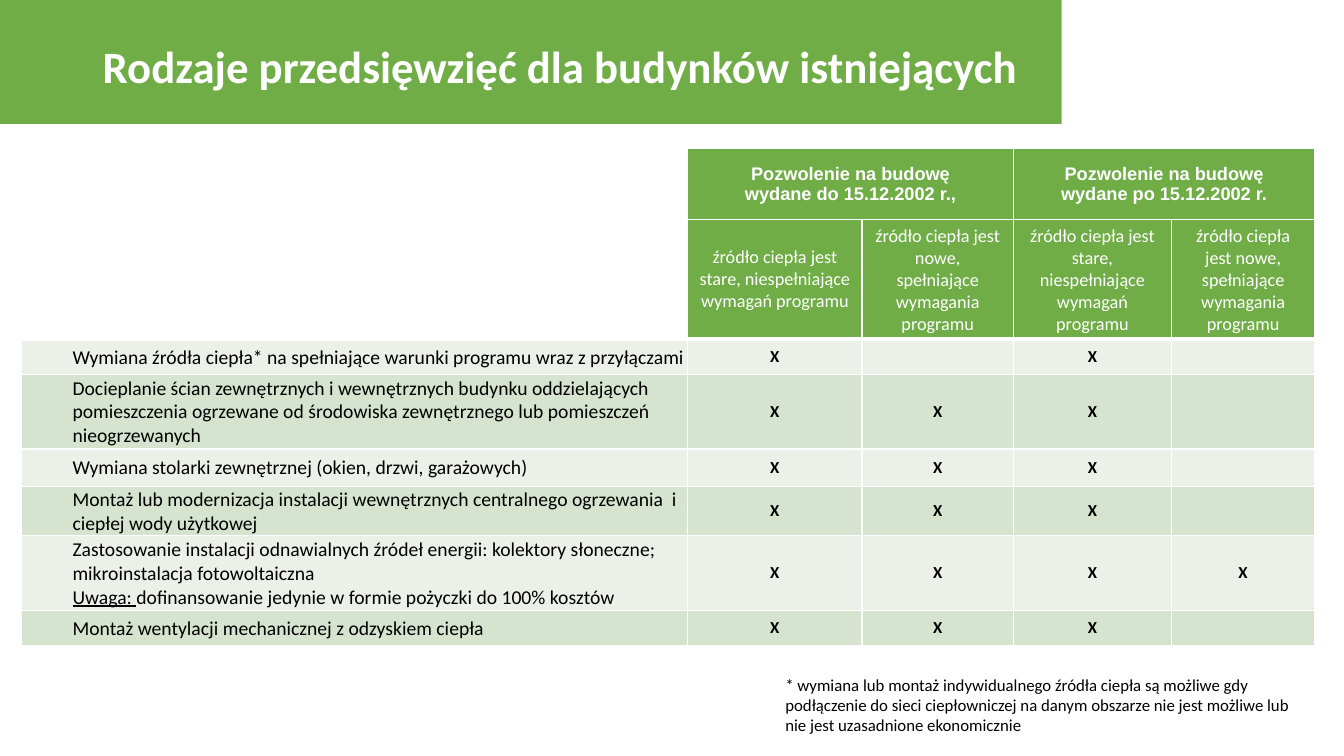
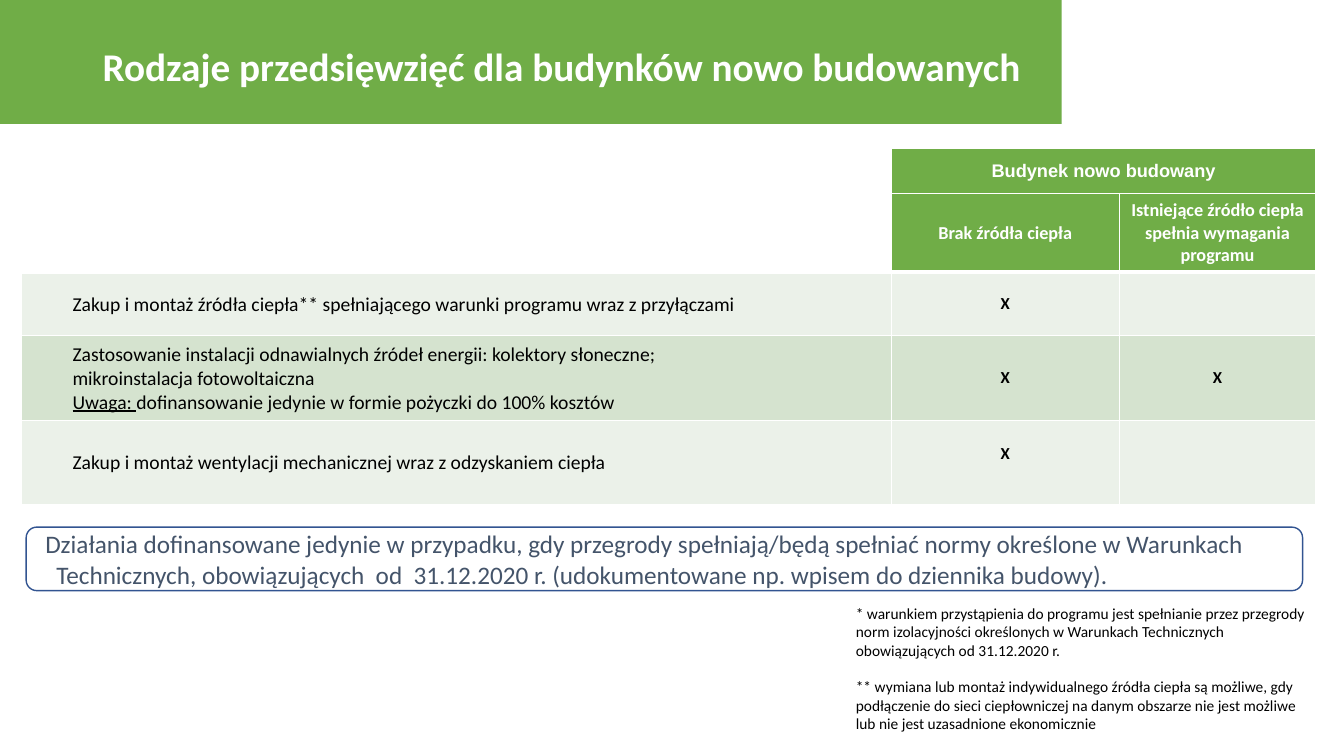
from lxml import etree
from pptx import Presentation
from pptx.dml.color import RGBColor
from pptx.enum.shapes import MSO_SHAPE
from pptx.enum.text import MSO_ANCHOR, PP_ALIGN
from pptx.oxml.ns import qn
from pptx.util import Inches, Pt

GREEN, WHITE, BLACK = "70AD47", "FFFFFF", "000000"
BANDS = ("EBF1E9", "D5E3CF")
CALLOUT_LINE, CALLOUT_TEXT = "325491", "44546A"

RENEWABLES = "Zastosowanie instalacji odnawialnych źródeł energii: kolektory słoneczne;"
PHOTOVOLTAIC = "mikroinstalacja fotowoltaiczna"
LOAN_NOTE = [("Uwaga: ", {"underline": True}),
             ("dofinansowanie jedynie w formie pożyczki do 100% kosztów", {})]
OLD_SOURCE = ["źródło ciepła jest stare, niespełniające wymagań programu"]
NEW_SOURCE = ["źródło ciepła jest nowe, spełniające wymagania programu"]


def rgb(value):
    return RGBColor.from_string(value)


def set_borders(cell, top, bottom):
    """Draw white cell borders; top and bottom widths are in points."""
    tc_pr = cell._tc.get_or_add_tcPr()
    for tag, width in (("lnL", 1), ("lnR", 1), ("lnT", top), ("lnB", bottom)):
        ln = etree.SubElement(tc_pr, qn(f"a:{tag}"), w=str(Pt(width)))
        fill = etree.SubElement(ln, qn("a:solidFill"))
        etree.SubElement(fill, qn("a:srgbClr"), val=WHITE)


class Deck:
    def __init__(self):
        self.prs = Presentation()
        self.prs.slide_width, self.prs.slide_height = Inches(13.33), Inches(7.5)
        self.s = None

    def fill_frame(self, tf, paragraphs, size, color=BLACK, align=PP_ALIGN.LEFT,
                   para=None, **font):
        """Fill a frame; a paragraph is a string or a list of (text, format)."""
        for i, runs in enumerate(paragraphs):
            p = tf.add_paragraph() if i else tf.paragraphs[0]
            p.alignment = align
            for name, value in (para or {}).items():
                if i or name != "space_before":
                    setattr(p, name, value)
            for text, extra in [(runs, {})] if isinstance(runs, str) else runs:
                r = p.add_run()
                r.text = text
                r.font.color.rgb = rgb(color)
                style = {"name": "Calibri", "size": Pt(size), "bold": False}
                for name, value in (style | font | extra).items():
                    setattr(r.font, name, value)

    def shape(self, kind, box, fill, line=None):
        sp = self.s.shapes.add_shape(kind, *map(Inches, box))
        sp.shadow.inherit = False
        sp.fill.solid()
        sp.fill.fore_color.rgb = rgb(fill)
        if line:
            sp.line.color.rgb = rgb(line)
            sp.line.width = Pt(1)
        else:
            sp.line.fill.background()
        return sp

    def text(self, box, paragraphs, size, anchor=MSO_ANCHOR.TOP, **style):
        tf = self.s.shapes.add_textbox(*map(Inches, box)).text_frame
        tf.word_wrap = True
        tf.vertical_anchor = anchor
        self.fill_frame(tf, paragraphs, size, **style)

    def slide(self, title, size):
        """Start a slide with the green band and its title."""
        self.s = self.prs.slides.add_slide(self.prs.slide_layouts[6])
        self.shape(MSO_SHAPE.RECTANGLE, (0, 0, 10.53, 1.23), GREEN)
        self.text((0.92, 0.21, 9.61, 0.94), [title], size, MSO_ANCHOR.MIDDLE,
                  color=WHITE, bold=True, para={"line_spacing": 0.9})

    def cell(self, cell, paragraphs, size, fill=None, top=1, bottom=1, **style):
        set_borders(cell, top, bottom)
        cell.vertical_anchor = MSO_ANCHOR.MIDDLE
        if fill:
            cell.fill.solid()
            cell.fill.fore_color.rgb = rgb(fill)
        else:
            cell.fill.background()
        if paragraphs:
            self.fill_frame(cell.text_frame, paragraphs, size, **style)
        else:
            p = cell.text_frame.paragraphs[0]._p
            etree.SubElement(p, qn("a:endParaRPr"), sz=str(size * 100))

    def table(self, widths, heights, groups, subheads, rows, bold_subheads=False):
        """Place a table; each group heads two columns, each row is (label, marks)."""
        frame = self.s.shapes.add_table(
            len(heights), len(widths), Inches(0.21), Inches(1.47),
            Inches(sum(widths)), Inches(sum(heights)))
        t = frame.table
        t.first_row = t.horz_banding = False
        for col, width in zip(t.columns, widths):
            col.width = Inches(width)
        for row, height in zip(t.rows, heights):
            row.height = Inches(height)

        t.cell(0, 0).merge(t.cell(1, 0))
        for r in (0, 1):
            self.cell(t.cell(r, 0), None, 13, bottom=3)
        head = {"fill": GREEN, "color": WHITE, "align": PP_ALIGN.CENTER}
        for i, group in enumerate(groups):
            left, right = t.cell(0, 2 * i + 1), t.cell(0, 2 * i + 2)
            left.merge(right)
            self.cell(left, group, 13, bold=True, name="Arial", **head)
            self.cell(right, None, 13, GREEN)
        for c, subhead in enumerate(subheads, 1):
            self.cell(t.cell(1, c), subhead, 13, bottom=3, bold=bold_subheads, **head)

        for r, (label, marks) in enumerate(rows, 2):
            fill = BANDS[r % 2]
            first = t.cell(r, 0)
            first.margin_left = Inches(0.51)
            first.margin_right = first.margin_top = Inches(0.01)
            first.margin_bottom = 0
            self.cell(first, label, 14, fill)
            for c, mark in enumerate(marks, 1):
                self.cell(t.cell(r, c), ["X"] if mark == "X" else None, 12, fill,
                          top=3 if r == 2 else 1, bold=True, align=PP_ALIGN.CENTER)
        return t

    def callout(self, box, text):
        sp = self.shape(MSO_SHAPE.ROUNDED_RECTANGLE, box, WHITE, CALLOUT_LINE)
        tf = sp.text_frame
        tf.word_wrap = True
        tf.vertical_anchor = MSO_ANCHOR.MIDDLE
        self.fill_frame(tf, [text], 18, CALLOUT_TEXT)
        p_pr = tf.paragraphs[0]._p.get_or_add_pPr()
        p_pr.set("marL", str(Inches(0.17)))
        p_pr.set("indent", str(Inches(-0.11)))


def existing_buildings(deck):
    deck.slide("Rodzaje przedsięwzięć dla budynków istniejących", 32)
    deck.table(
        widths=(6.61, 1.73, 1.5, 1.57, 1.42),
        heights=(0.71, 1.18, 0.35, 0.74, 0.37, 0.49, 0.74, 0.35),
        groups=[["Pozwolenie na budowę", "wydane do 15.12.2002 r.,"],
                ["Pozwolenie na budowę", "wydane po 15.12.2002 r."]],
        subheads=[OLD_SOURCE, NEW_SOURCE] * 2,
        rows=[
            (["Wymiana źródła ciepła* na spełniające warunki programu wraz z przyłączami"],
             "X-X-"),
            (["Docieplanie ścian zewnętrznych i wewnętrznych budynku oddzielających "
              "pomieszczenia ogrzewane od środowiska zewnętrznego lub pomieszczeń "
              "nieogrzewanych"], "XXX-"),
            (["Wymiana stolarki zewnętrznej (okien, drzwi, garażowych)"], "XXX-"),
            (["Montaż lub modernizacja instalacji wewnętrznych centralnego ogrzewania  i "
              "ciepłej wody użytkowej"], "XXX-"),
            ([f"{RENEWABLES} {PHOTOVOLTAIC}", LOAN_NOTE], "XXXX"),
            (["Montaż wentylacji mechanicznej z odzyskiem ciepła"], "XXX-"),
        ])
    deck.text((7.69, 6.64, 5.35, 0.71), [
        "* wymiana lub montaż indywidualnego źródła ciepła są możliwe gdy podłączenie "
        "do sieci ciepłowniczej na danym obszarze nie jest możliwe lub nie jest "
        "uzasadnione ekonomicznie"], 12)


def new_buildings(deck):
    deck.slide("Rodzaje przedsięwzięć dla budynków nowo budowanych", 28)
    t = deck.table(
        widths=(8.63, 2.26, 1.95),
        heights=(0.45, 0.78, 0.63, 0.84, 0.84),
        groups=[["Budynek nowo budowany"]],
        subheads=[["Brak źródła ciepła"],
                  ["Istniejące źródło ciepła spełnia wymagania programu"]],
        rows=[
            (["Zakup i montaż źródła ciepła** spełniającego warunki programu "
              "wraz z przyłączami"], "X-"),
            ([RENEWABLES, PHOTOVOLTAIC, LOAN_NOTE], "XX"),
            (["Zakup i montaż wentylacji mechanicznej wraz z odzyskaniem ciepła"], "X-"),
        ],
        bold_subheads=True)
    t.cell(4, 1).margin_bottom = Inches(0.23)
    deck.text((8.39, 5.94, 4.66, 1.4), [
        "* warunkiem przystąpienia do programu jest spełnianie przez przegrody norm "
        "izolacyjności określonych w Warunkach Technicznych obowiązujących od "
        "31.12.2020 r.",
        "** wymiana lub montaż indywidualnego źródła ciepła są możliwe, gdy podłączenie "
        "do sieci ciepłowniczej na danym obszarze nie jest możliwe lub nie jest "
        "uzasadnione ekonomicznie"], 11, para={"space_before": Pt(13)})
    deck.callout(
        (0.26, 5.23, 12.66, 0.63),
        "Działania dofinansowane jedynie w przypadku, gdy przegrody spełniają/będą "
        "spełniać normy określone w Warunkach Technicznych, obowiązujących  od  "
        "31.12.2020 r. (udokumentowane np. wpisem do dziennika budowy).")


def main():
    deck = Deck()
    existing_buildings(deck)
    new_buildings(deck)
    deck.prs.save("out.pptx")


if __name__ == "__main__":
    main()
